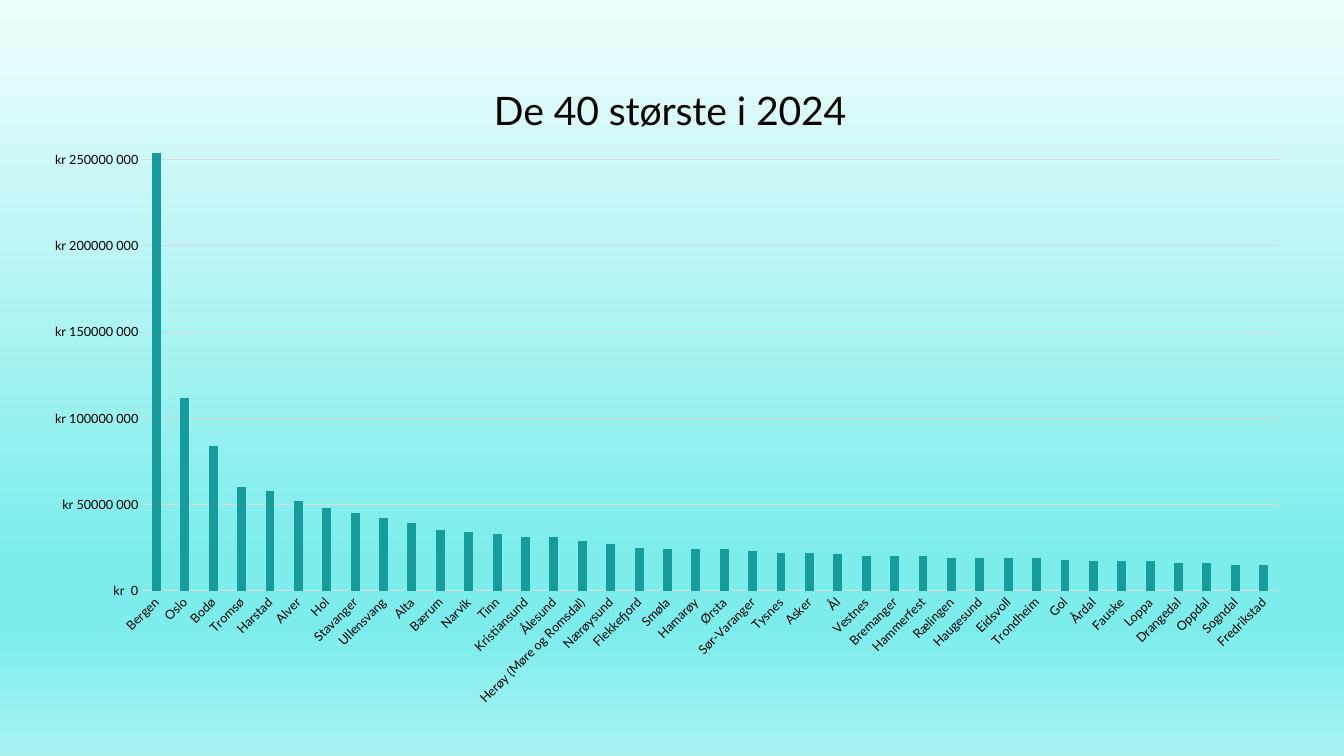
from copy import deepcopy

from lxml import etree
from pptx import Presentation
from pptx import util as u
from pptx.chart.data import CategoryChartData
from pptx.dml.color import RGBColor
from pptx.enum import chart as kinds
from pptx.oxml.ns import qn

FONT = "Lato"
COLORS = {"text": "000000", "bar": "169C9A", "grid": "D9D9D9"}
STOPS = [(0, "F0FDFD"), (74, "7CEDEB"), (83, "7CEDEB"), (100, "A8F3F2")]
TOWNS = [
    "Bergen", "Oslo", "Bodø", "Tromsø", "Harstad", "Alver", "Hol", "Stavanger",
    "Ullensvang", "Alta", "Bærum", "Narvik", "Tinn", "Kristiansund", "Ålesund",
    "Herøy (Møre og Romsdal)", "Nærøysund", "Flekkefjord", "Smøla", "Hamarøy",
    "Ørsta", "Sør-Varanger", "Tysnes", "Asker", "Ål", "Vestnes", "Bremanger",
    "Hammerfest", "Rælingen", "Haugesund", "Eidsvoll", "Trondheim", "Gol",
    "Årdal", "Fauske", "Loppa", "Drangedal", "Oppdal", "Sogndal", "Fredrikstad",
]
MILLIONS = [
    254, 112, 84, 60, 58, 52, 48, 45, 42, 39, 35, 34, 33, 31, 31, 29, 27, 25, 24, 24,
    24, 23, 22, 22, 21, 20, 20, 20, 19, 19, 19, 19, 18, 17, 17, 17, 16, 16, 15, 15,
]


def style(font, size):
    font.name = FONT
    font.size = u.Pt(size)
    font.color.rgb = RGBColor.from_string(COLORS["text"])


def place(part, index, **settings):
    """Give a chart part a manual layout, in fractions of the chart."""
    for old in part.findall(qn("c:layout")):
        part.remove(old)
    layout = etree.Element(qn("c:layout"))
    manual = etree.SubElement(layout, qn("c:manualLayout"))
    for name, value in settings.items():
        etree.SubElement(manual, qn("c:" + name)).set("val", str(value))
    part.insert(index, layout)


prs = Presentation()
prs.slide_width, prs.slide_height = u.Cm(33.87), u.Cm(19.05)
slide = prs.slides.add_slide(prs.slide_layouts[6])

# Background gradient, from top to bottom
fill = slide.background.fill
fill.gradient()
fill.gradient_angle = 270
stop_list = slide.element.find(".//" + qn("a:gsLst"))
while len(stop_list) < len(STOPS):
    stop_list.append(deepcopy(stop_list[-1]))
for stop, (percent, color) in zip(fill.gradient_stops, STOPS):
    stop.position = percent / 100
    stop.color.rgb = RGBColor.from_string(color)

# Column chart
data = CategoryChartData()
data.categories = TOWNS
data.add_series("Series 1", [value * 1_000_000 for value in MILLIONS])
chart = slide.shapes.add_chart(
    kinds.XL_CHART_TYPE.COLUMN_CLUSTERED,
    u.Cm(0.69), u.Cm(1.02), u.Cm(32.16), u.Cm(17.12), data).chart
style(chart.font, 10)
chart.has_legend = False
root = chart.element
place(root.find(".//" + qn("c:plotArea")), 0, layoutTarget="inner",
      xMode="edge", yMode="edge", x=0.09, y=0.15, w=0.89, h=0.66)

title = chart.chart_title.text_frame
title.text = "De 40 største i 2024"
style(title.paragraphs[0].font, 28)
title.paragraphs[0].font.bold = False
place(root.find(".//" + qn("c:title")), 1, xMode="edge", yMode="edge", x=0.36, y=0.05)

plot = chart.plots[0]
plot.gap_width = 219
plot.overlap = -27
plot.vary_by_categories = False
bars = plot.series[0].format.fill
bars.solid()
bars.fore_color.rgb = RGBColor.from_string(COLORS["bar"])

# Axes
towns, money = chart.category_axis, chart.value_axis
for axis in (towns, money):
    axis.major_tick_mark = axis.minor_tick_mark = kinds.XL_TICK_MARK.NONE
    style(axis.tick_labels.font, 9)
labels = root.find(".//" + qn("c:catAx")).find(qn("c:txPr"))
labels.find(qn("a:bodyPr")).set("rot", "-2700000")

money.minimum_scale = 0
money.maximum_scale = 260_000_000
money.major_unit = 50_000_000
money.has_major_gridlines = True
money.tick_labels.number_format = '"kr"\\ #\\ ##0;[Red]\\-"kr"\\ #\\ ##0'
money.tick_labels.number_format_is_linked = False
money.format.line.fill.background()
for line in (towns.format.line, money.major_gridlines.format.line):
    line.width = u.Pt(0.75)
    line.color.rgb = RGBColor.from_string(COLORS["grid"])

prs.save("out.pptx")
